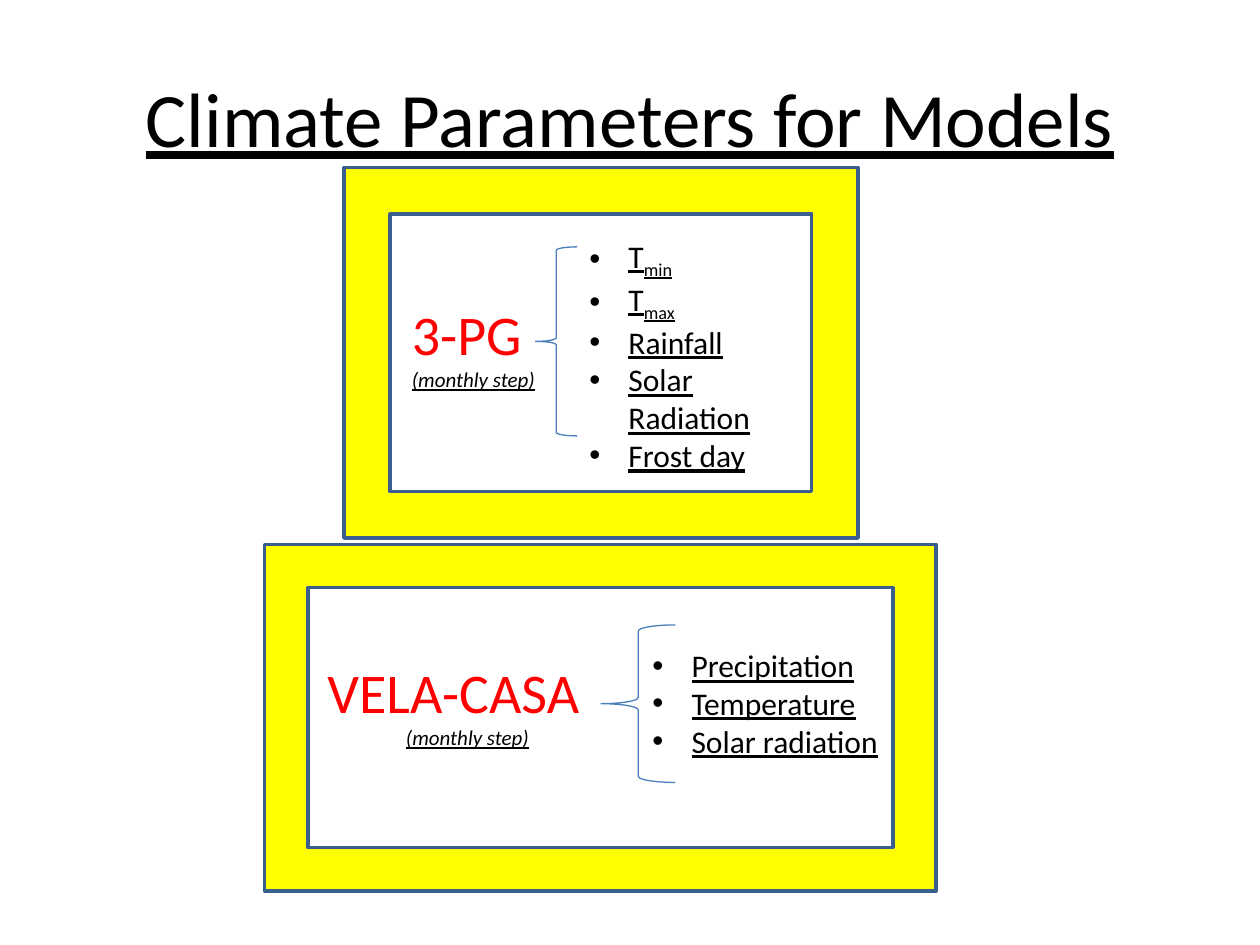
from lxml import etree
from pptx import Presentation
from pptx.dml.color import RGBColor
from pptx.enum.shapes import MSO_SHAPE
from pptx.enum.text import MSO_ANCHOR, PP_ALIGN
from pptx.oxml.ns import qn
from pptx.util import Inches, Pt

FRAME, BRACE = MSO_SHAPE.FRAME, MSO_SHAPE.LEFT_BRACE
LEFT, CENTER = PP_ALIGN.LEFT, PP_ALIGN.CENTER
BLACK = RGBColor(0x00, 0x00, 0x00)
RED = RGBColor(0xFF, 0x00, 0x00)
YELLOW = RGBColor(0xFF, 0xFF, 0x00)
NAVY = RGBColor(0x3A, 0x5F, 0x8C)
BLUE = RGBColor(0x4B, 0x7E, 0xBC)
FONT = "Calibri"
WIDE, HIGH = 10, 7.5
INDENT = Inches(0.31)

# Each parameter is a list of (text, is subscript) runs.
MODELS = [
    dict(name="3-PG", align=LEFT,
         frame=(2.73, 1.33, 4.08, 2.94), label=(3.17, 2.33, 1.25, 0.84),
         brace=(4.25, 1.96, 0.33, 1.5), items=(4.58, 1.83, 1.83, 1.92),
         params=[[("T", False), ("min", True)],
                 [("T", False), ("max", True)],
                 [("Rainfall", False)],
                 [("Solar Radiation", False)],
                 [("Frost day", False)]]),
    dict(name="VELA-CASA", align=CENTER,
         frame=(2.1, 4.32, 5.33, 2.75), label=(2.5, 5.17, 2.42, 0.84),
         brace=(4.77, 4.96, 0.59, 1.25), items=(5.08, 5.08, 2.92, 1.31),
         params=[[("Precipitation", False)],
                 [("Temperature", False)],
                 [("Solar radiation", False)]]),
]


def add_run(para, text, size, color=BLACK, under=True, italic=False):
    run = para.add_run()
    run.text = text
    font = run.font
    font.name, font.size = FONT, Pt(size)
    font.color.rgb = color
    font.underline, font.italic = under, italic
    return run


def add_title(slide, text):
    title = slide.shapes.title
    title.left, title.top = Inches(0.05 * WIDE), Inches(0.04 * HIGH)
    title.width, title.height = Inches(0.9 * WIDE), Inches(HIGH / 6)
    title.text_frame.vertical_anchor = MSO_ANCHOR.MIDDLE
    para = title.text_frame.paragraphs[0]
    para.alignment = CENTER
    add_run(para, text, 44)


def add_outline(slide, kind, box, color, width, fill=None):
    shape = slide.shapes.add_shape(kind, *map(Inches, box))
    shape.shadow.inherit = False
    shape.line.color.rgb = color
    shape.line.width = Pt(width)
    if fill is None:
        shape.fill.background()
    else:
        shape.fill.solid()
        shape.fill.fore_color.rgb = fill


def add_text(slide, box, count):
    """Add a wrapping text box and return its count paragraphs."""
    frame = slide.shapes.add_textbox(*map(Inches, box)).text_frame
    frame.word_wrap = True
    for _ in range(count - 1):
        frame.add_paragraph()
    return frame.paragraphs


def set_bullet(para):
    props = para._p.get_or_add_pPr()
    props.set("marL", str(INDENT))
    props.set("indent", str(-INDENT))
    etree.SubElement(props, qn("a:buFont")).set("typeface", "Arial")
    etree.SubElement(props, qn("a:buChar")).set("char", "•")


def add_items(slide, box, params):
    for para, runs in zip(add_text(slide, box, len(params)), params):
        set_bullet(para)
        for text, sub in runs:
            run = add_run(para, text, 18)
            if sub:
                run.font._element.set("baseline", "-25000")


def add_label(slide, box, name, align):
    head, step = add_text(slide, box, 2)
    add_run(head, name, 32, RED, under=False)
    step.alignment = align
    add_run(step, "(monthly step)", 12, italic=True)


def main():
    deck = Presentation()
    deck.slide_width, deck.slide_height = Inches(WIDE), Inches(HIGH)
    slide = deck.slides.add_slide(deck.slide_layouts[5])
    add_title(slide, "Climate Parameters for Models")
    for model in MODELS:
        add_outline(slide, BRACE, model["brace"], BLUE, 0.75)
        add_items(slide, model["items"], model["params"])
        add_outline(slide, FRAME, model["frame"], NAVY, 2, YELLOW)
        add_label(slide, model["label"], model["name"], model["align"])
    deck.save("out.pptx")


if __name__ == "__main__":
    main()
